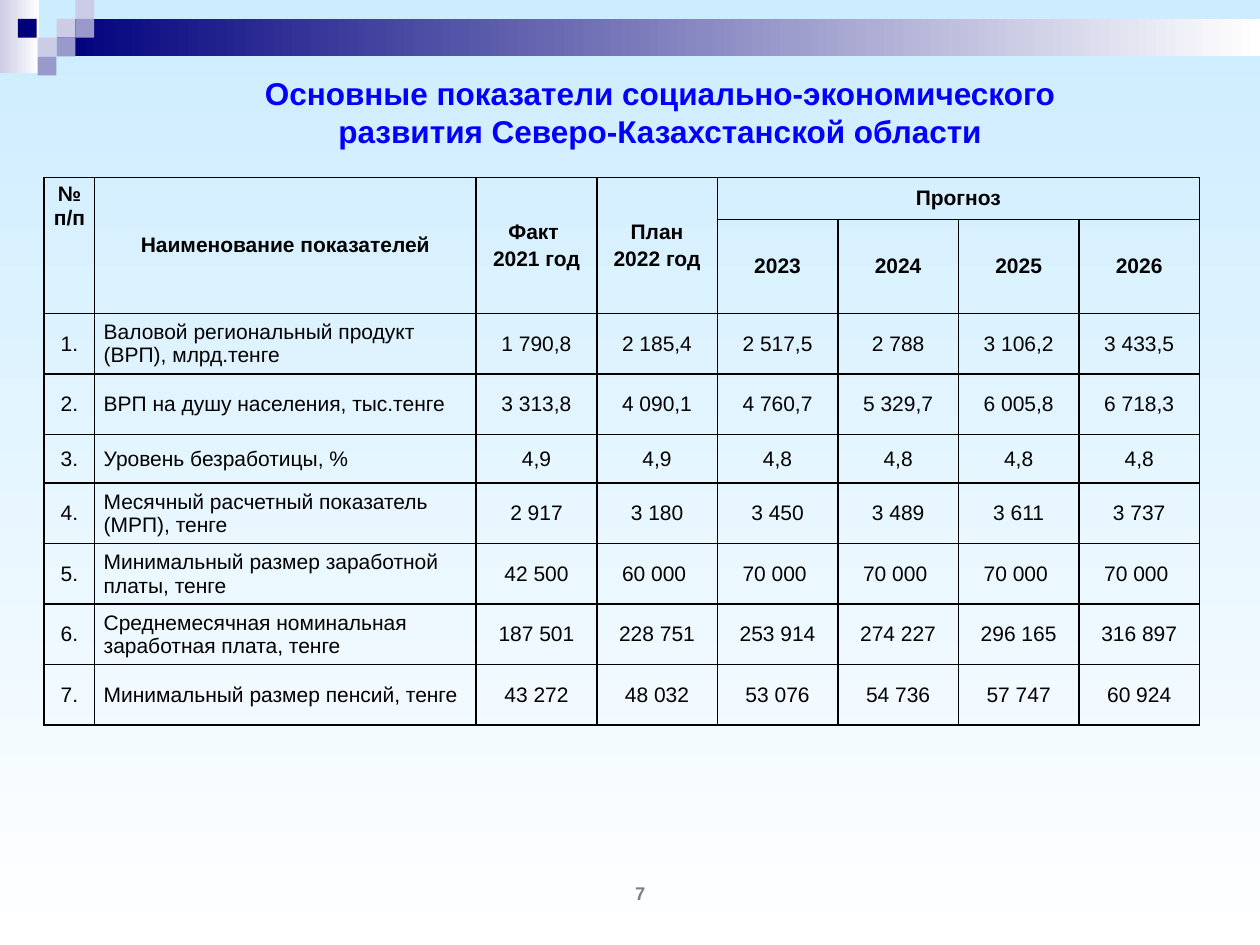
import pptx
import pptx.util
import pptx.dml.color
import pptx.enum.shapes
import pptx.enum.text
import pptx.oxml
import pptx.oxml.ns

Cm, Pt = pptx.util.Cm, pptx.util.Pt
ALIGN, ANCHOR = pptx.enum.text.PP_ALIGN, pptx.enum.text.MSO_ANCHOR

COLOURS = {"sky": "CCECFF", "white": "FFFFFF", "navy": "00007D", "lilac": "CCCCE6",
           "violet": "9999CC", "title": "0000FF", "black": "000000", "grey": "7F7F7F"}
FONT = "Arial"
TITLE = "Основные показатели социально-экономического развития Северо-Казахстанской области"
PAGE = "7"
HEADINGS = [(["№ п/п"], 0, 0, 1, 0), (["Наименование показателей"], 0, 1, 1, 1),
            (["Факт ", "2021 год"], 0, 2, 1, 2), (["План", "2022 год"], 0, 3, 1, 3),
            (["Прогноз"], 0, 4, 0, 7)]
YEARS = ["2023", "2024", "2025", "2026"]
INDICATORS = [
    ("Валовой региональный продукт (ВРП), млрд.тенге",
     ["1 790,8", "2 185,4", "2 517,5", "2 788", "3 106,2", "3 433,5"]),
    ("ВРП на душу населения, тыс.тенге",
     ["3 313,8", "4 090,1", "4 760,7", "5 329,7", "6 005,8", "6 718,3"]),
    ("Уровень безработицы, %", ["4,9", "4,9", "4,8", "4,8", "4,8", "4,8"]),
    ("Месячный расчетный показатель (МРП), тенге",
     ["2 917", "3 180", "3 450", "3 489", "3 611", "3 737"]),
    ("Минимальный размер заработной платы, тенге",
     ["42 500", "60 000 ", "70 000 ", "70 000 ", "70 000 ", "70 000 "]),
    ("Среднемесячная номинальная заработная плата, тенге",
     ["187 501", "228 751", "253 914", "274 227", "296 165", "316 897"]),
    ("Минимальный размер пенсий, тенге",
     ["43 272", "48 032", "53 076", "54 736", "57 747", "60 924"]),
]
COLUMN_WIDTHS = [1.02, 7.69] + [2.43] * 6
ROW_HEIGHTS = [0.84, 1.9, 1.22, 1.22, 0.98] + [1.22] * 4
SQUARE = 0.38
BANDS = [(0, 0, 0.79, 1.47, "lilac"), (1.14, SQUARE, 24.26, 0.76, "navy")]
SQUARES = [(3, 1, "lilac"), (4, 0, "lilac"), (4, 1, "violet"), (2, 2, "lilac"),
           (0.95, 1, "navy"), (3, 2, "violet"), (2, 3, "violet")]


def rgb(name):
    """Return the named colour."""
    return pptx.dml.color.RGBColor.from_string(COLOURS[name])


def fill_gradient(fill, start, end, angle):
    """Fill with a two-colour linear gradient."""
    fill.gradient()
    fill.gradient_angle = angle
    for stop, name in zip(fill.gradient_stops, (start, end)):
        stop.color.rgb = rgb(name)


def add_block(slide, left, top, width, height):
    """Add a plain rectangle and return its fill."""
    block = slide.shapes.add_shape(pptx.enum.shapes.MSO_SHAPE.RECTANGLE,
                                   Cm(left), Cm(top), Cm(width), Cm(height))
    block.shadow.inherit = False
    block.line.fill.background()
    return block.fill


def write(frame, lines, size, colour="black", bold=False, align=ALIGN.CENTER, before=0):
    """Write one paragraph per line."""
    frame.word_wrap = True
    for index, line in enumerate(lines):
        paragraph = frame.add_paragraph() if index else frame.paragraphs[0]
        paragraph.alignment = align
        paragraph.space_before = Pt(before)
        run = paragraph.add_run()
        run.text = line
        run.font.name, run.font.size, run.font.bold = FONT, Pt(size), bold
        run.font.color.rgb = rgb(colour)


def place(shape, left, top, width, height):
    """Move and size a shape and centre its text vertically."""
    shape.left, shape.top, shape.width, shape.height = Cm(left), Cm(top), Cm(width), Cm(height)
    shape.text_frame.auto_size = pptx.enum.text.MSO_AUTO_SIZE.NONE
    shape.text_frame.vertical_anchor = ANCHOR.MIDDLE


def format_cell(cell):
    """Give a cell thin borders, no fill and narrow margins."""
    cell.vertical_anchor = ANCHOR.MIDDLE
    cell.margin_left = cell.margin_right = Cm(0.18)
    cell.margin_top = cell.margin_bottom = Cm(0.1)
    properties = cell._tc.get_or_add_tcPr()
    for side in "LRTB":
        properties.append(pptx.oxml.parse_xml(
            f'<a:ln{side} {pptx.oxml.ns.nsdecls("a")} w="{Pt(1)}"><a:solidFill>'
            f'<a:srgbClr val="{COLOURS["black"]}"/></a:solidFill></a:ln{side}>'))
    cell.fill.background()


def add_indicators(slide):
    """Add the table of indicators."""
    table = slide.shapes.add_table(len(ROW_HEIGHTS), len(COLUMN_WIDTHS), Cm(0.89), Cm(3.58),
                                   Cm(sum(COLUMN_WIDTHS)), Cm(sum(ROW_HEIGHTS))).table
    table.first_row = table.horz_banding = False
    for column, width in zip(table.columns, COLUMN_WIDTHS):
        column.width = Cm(width)
    for row, height in zip(table.rows, ROW_HEIGHTS):
        row.height = Cm(height)
    for cell in table.iter_cells():
        format_cell(cell)
    for lines, top, left, bottom, right in HEADINGS:
        heading = table.cell(top, left)
        heading.merge(table.cell(bottom, right))
        write(heading.text_frame, lines, 12, bold=True, before=2.4)
    table.cell(0, 0).vertical_anchor = ANCHOR.TOP
    for column, year in enumerate(YEARS, 4):
        write(table.cell(1, column).text_frame, [year], 12, bold=True, before=2.4)
    for number, (indicator, values) in enumerate(INDICATORS, 1):
        for column, text in enumerate([f"{number}.", indicator, *values]):
            write(table.cell(number + 1, column).text_frame, [text], 12,
                  align=ALIGN.LEFT if column == 1 else ALIGN.CENTER, before=2.4)


def main():
    """Build the slide and save it."""
    deck = pptx.Presentation()
    deck.slide_width, deck.slide_height = Cm(25.4), Cm(19.05)
    slide = deck.slides.add_slide(deck.slide_layouts[5])
    fill_gradient(slide.background.fill, "sky", "white", 270)
    for *box, colour in BANDS:
        fill_gradient(add_block(slide, *box), colour, "white", 0)
    for column, row, colour in SQUARES:
        fill = add_block(slide, column * SQUARE, row * SQUARE, SQUARE, SQUARE)
        fill.solid()
        fill.fore_color.rgb = rgb(colour)
    page = slide.shapes.add_textbox(0, 0, 0, 0)
    place(page, 11, 17.78, 3.81, 0.46)
    write(page.text_frame, [PAGE], 10.5, "grey", True)
    title = slide.shapes.title
    place(title, 4.24, 1.42, 18.14, 1.68)
    write(title.text_frame, [TITLE], 18, "title", True)
    add_indicators(slide)
    deck.save("out.pptx")


if __name__ == "__main__":
    main()
